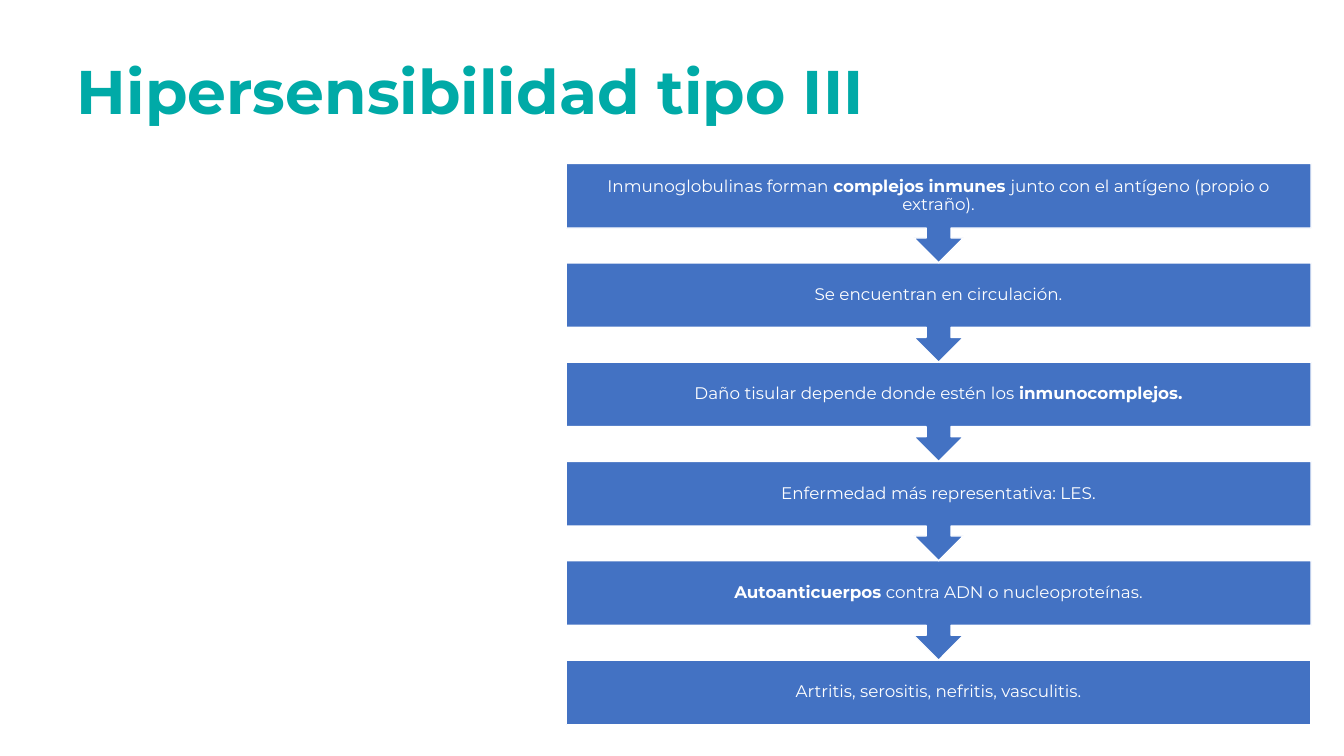
import dataclasses

import pptx
import pptx.dml.color
import pptx.enum.shapes
import pptx.enum.text
import pptx.util

Cm = pptx.util.Cm
Pt = pptx.util.Pt
RGB = pptx.dml.color.RGBColor
SHAPES = pptx.enum.shapes.MSO_SHAPE
ALIGN = pptx.enum.text.PP_ALIGN
ANCHOR = pptx.enum.text.MSO_ANCHOR


@dataclasses.dataclass(frozen=True)
class Theme:
    font: str = "Montserrat"
    title_color: RGB = RGB.from_string("00AAA7")
    step_fill: RGB = RGB.from_string("4372C3")
    white: RGB = RGB.from_string("FFFFFF")
    title_size: Pt = Pt(44)
    step_size: Pt = Pt(12)
    line_spacing: float = 0.9


@dataclasses.dataclass(frozen=True)
class Box:
    left: float
    top: float
    width: float
    height: float


THEME = Theme()
TITLE = "Hipersensibilidad tipo III"
TITLE_BOX = Box(1.68, 0.53, 29.21, 3.68)
FLOW_BOX = Box(14.27, 4.12, 18.77, 14.14)
BODY_SHARE = 0.65

# Each step is a list of (text, bold) spans.
STEPS = [
    [("Inmunoglobulinas forman ", False), ("complejos inmunes ", True),
     ("junto con el antígeno (propio o extraño).", False)],
    [("Se encuentran en circulación.", False)],
    [("Daño tisular depende donde estén los ", False), ("inmunocomplejos.", True)],
    [("Enfermedad más representativa: LES.", False)],
    [("Autoanticuerpos", True), (" contra ADN o nucleoproteínas.", False)],
    [("Artritis, serositis, nefritis, vasculitis.", False)],
]


def write_spans(para, spans, size, color, align):
    para.alignment = align
    para.line_spacing = THEME.line_spacing
    for text, bold in spans:
        span = para.add_run()
        span.text = text
        span.font.name = THEME.font
        span.font.size = size
        span.font.bold = bold
        span.font.color.rgb = color


def add_title(page, box):
    title = page.shapes.title
    title.left, title.top = Cm(box.left), Cm(box.top)
    title.width, title.height = Cm(box.width), Cm(box.height)
    frame = title.text_frame
    frame.auto_size = pptx.enum.text.MSO_AUTO_SIZE.NONE
    frame.vertical_anchor = ANCHOR.MIDDLE
    write_spans(frame.paragraphs[0], [(TITLE, True)], THEME.title_size,
                THEME.title_color, ALIGN.LEFT)


def add_step(page, box, spans, is_last):
    """Draw a step; all but the last point down to the next one."""
    kind = SHAPES.RECTANGLE if is_last else SHAPES.DOWN_ARROW_CALLOUT
    height = box.height * BODY_SHARE if is_last else box.height
    step = page.shapes.add_shape(kind, Cm(box.left), Cm(box.top),
                                 Cm(box.width), Cm(height))
    if not is_last:
        for index, value in enumerate((0.25, 0.25, 0.25, BODY_SHARE)):
            step.adjustments[index] = value
    step.shadow.inherit = False
    step.fill.solid()
    step.fill.fore_color.rgb = THEME.step_fill
    step.line.color.rgb = THEME.white
    step.line.width = Pt(1)
    frame = step.text_frame
    frame.word_wrap = True
    frame.vertical_anchor = ANCHOR.MIDDLE
    frame.margin_left = frame.margin_right = Cm(0.24)
    frame.margin_top = frame.margin_bottom = Cm(0.24)
    write_spans(frame.paragraphs[0], spans, THEME.step_size, THEME.white,
                ALIGN.CENTER)


def add_flow(page, box, steps):
    """Stack the steps from the bottom up, so each arrow tip lies on top."""
    last = len(steps) - 1
    pitch = box.height / (last + BODY_SHARE)
    for index in reversed(range(len(steps))):
        step_box = Box(box.left, box.top + index * pitch, box.width, pitch)
        add_step(page, step_box, steps[index], index == last)


def main():
    deck = pptx.Presentation()
    deck.slide_width, deck.slide_height = Cm(33.87), Cm(19.05)
    page = deck.slides.add_slide(deck.slide_layouts.get_by_name("Title Only"))
    add_title(page, TITLE_BOX)
    add_flow(page, FLOW_BOX, STEPS)
    deck.save("out.pptx")


if __name__ == "__main__":
    main()
